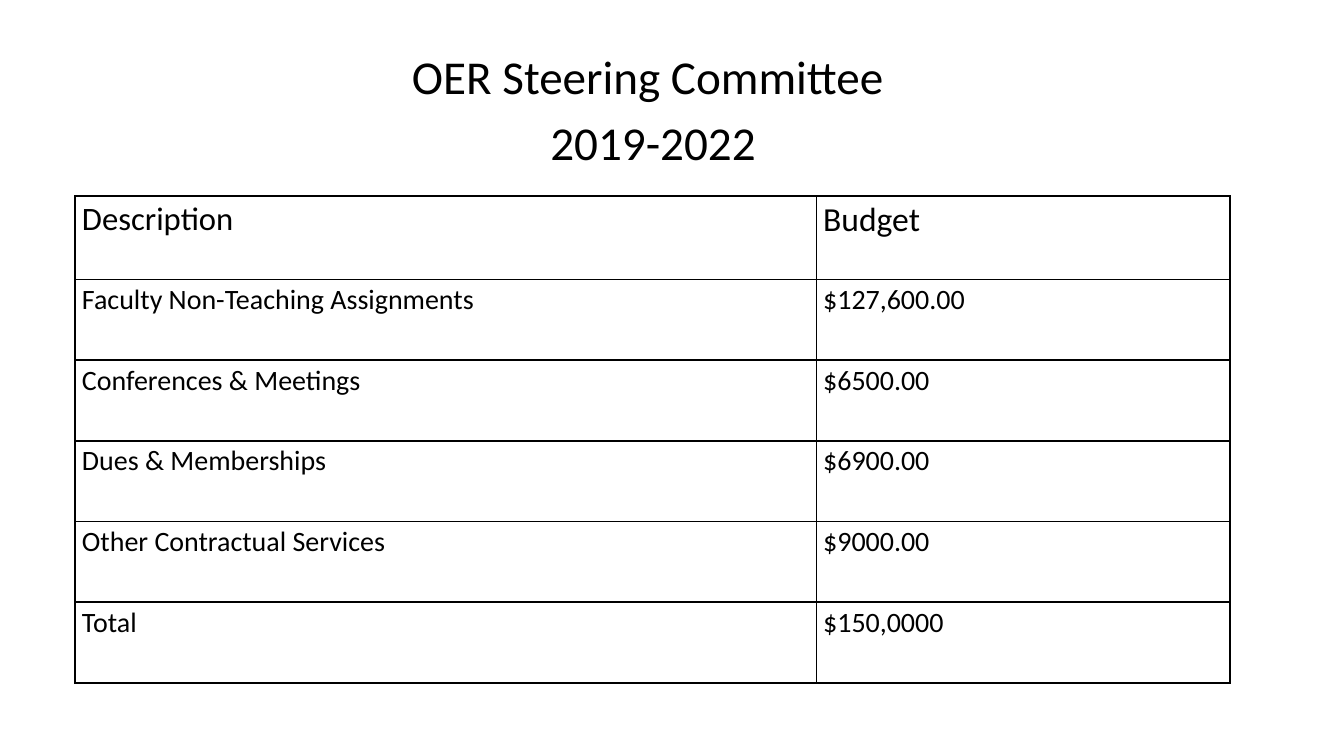
import pptx
import pptx.dml.color
import pptx.enum.text
import pptx.oxml
import pptx.oxml.ns
import pptx.util
from pptx.util import Inches

BLACK = pptx.dml.color.RGBColor(0, 0, 0)
WHITE = pptx.dml.color.RGBColor(255, 255, 255)

TITLE_LINES = ["OER Steering Committee ", "2019-2022"]
BUDGET_ROWS = [
    ("Description", "Budget"),
    ("Faculty Non-Teaching Assignments", "$127,600.00"),
    ("Conferences & Meetings", "$6500.00"),
    ("Dues & Memberships", "$6900.00"),
    ("Other Contractual Services", "$9000.00"),
    ("Total", "$150,0000"),
]
HEADER_SIZES = (35, 36)
BODY_SIZE = 30


def write_text(para, text, *, size, font="Calibri", color=BLACK, align=None, line_points=None):
    para.alignment = align
    if line_points:
        para.line_spacing = pptx.util.Pt(line_points)
    span = para.add_run()
    span.text = text
    span.font.name = font
    span.font.size = pptx.util.Pt(size)
    span.font.color.rgb = color


def add_borders(cell, points, color):
    """Draw the same line on all four sides; call before setting the cell fill."""
    properties = cell._tc.get_or_add_tcPr()
    for side in "LRTB":
        properties.append(pptx.oxml.parse_xml(
            f'<a:ln{side} {pptx.oxml.ns.nsdecls("a")} w="{int(pptx.util.Pt(points))}">'
            f'<a:solidFill><a:srgbClr val="{color}"/></a:solidFill></a:ln{side}>'))


class SlideBuilder:
    def __init__(self, slide):
        self.slide = slide
        self.border_points = 2.25

    def add_title(self, lines, left, top, width, height):
        box = self.slide.shapes.add_textbox(
            Inches(left), Inches(top), Inches(width), Inches(height))
        frame = box.text_frame
        frame.word_wrap = True
        frame.auto_size = pptx.enum.text.MSO_AUTO_SIZE.SHAPE_TO_FIT_TEXT
        frame.margin_left = frame.margin_right = 0
        frame.margin_top = frame.margin_bottom = 0
        for index, line in enumerate(lines):
            para = frame.add_paragraph() if index else frame.paragraphs[0]
            write_text(para, line, size=50.5, line_points=70.7,
                       align=pptx.enum.text.PP_ALIGN.CENTER)

    def add_budget_table(self, rows, left, top, column_widths, header_height, row_height):
        heights = [header_height] + [row_height] * (len(rows) - 1)
        table = self.slide.shapes.add_table(
            len(rows), len(column_widths), Inches(left), Inches(top),
            Inches(sum(column_widths)), Inches(sum(heights))).table
        table.first_row = table.horz_banding = False
        for column, width in zip(table.columns, column_widths):
            column.width = Inches(width)
        for row_index, texts in enumerate(rows):
            table.rows[row_index].height = Inches(heights[row_index])
            for column_index, text in enumerate(texts):
                cell = table.cell(row_index, column_index)
                add_borders(cell, self.border_points, BLACK)
                cell.fill.solid()
                cell.fill.fore_color.rgb = WHITE
                size = BODY_SIZE if row_index else HEADER_SIZES[column_index]
                write_text(cell.text_frame.paragraphs[0], text, size=size)


def main():
    deck = pptx.Presentation()
    deck.slide_width = Inches(20)
    deck.slide_height = Inches(11.25)
    builder = SlideBuilder(deck.slides.add_slide(deck.slide_layouts[6]))
    builder.add_budget_table(BUDGET_ROWS, 1.12, 2.92, (11.03, 6.15), 1.24, 1.2)
    builder.add_title(TITLE_LINES, 5.34, 0.57, 8.76, 1.92)
    deck.save("out.pptx")


if __name__ == "__main__":
    main()
